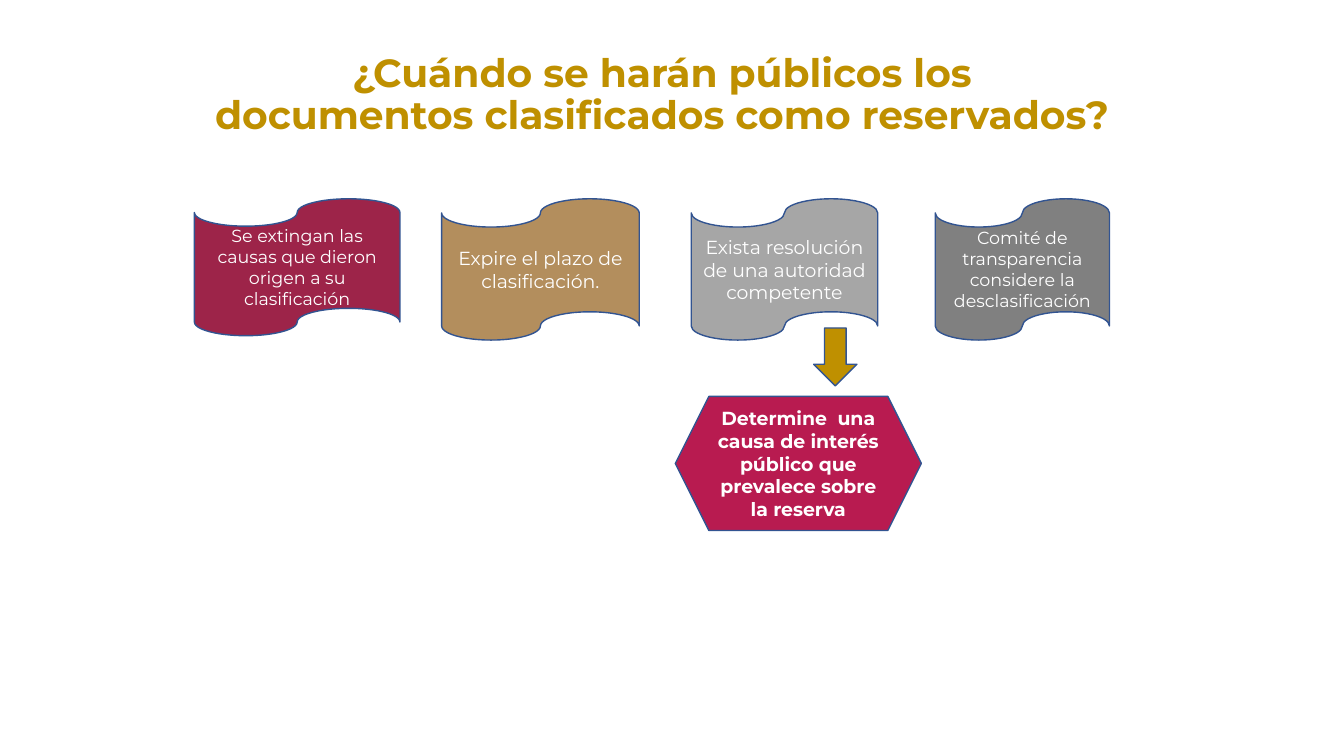
from pptx import Presentation
from pptx import util as u
from pptx.dml import color
from pptx.enum import shapes, text

COLORS = {
    "gold": "BF9000",
    "wine": "9D2449",
    "sand": "B38E5D",
    "silver": "A6A6A6",
    "gray": "808080",
    "crimson": "B81B50",
    "outline": "325491",
    "white": "FFFFFF",
}
FONT = "Montserrat"
TAPE_TOP = 5.01

# Left, width, height (cm), fill, text size, wording
CONDITIONS = [
    (4.9, 5.18, 3.45, "wine", 12.5,
     "Se extingan las causas que dieron origen a su clasificación"),
    (11.13, 4.98, 3.56, "sand", 13.5, "Expire el plazo de clasificación."),
    (17.42, 4.7, 3.56, "silver", 13.5,
     "Exista resolución de una autoridad competente"),
    (23.57, 4.39, 3.56, "gray", 12.5,
     "Comité de transparencia considere la desclasificación"),
]


def rgb(name):
    return color.RGBColor.from_string(COLORS[name])


def write(frame, wording, size, ink="white", bold=False, spacing=1.0):
    frame.word_wrap = True
    frame.vertical_anchor = text.MSO_ANCHOR.MIDDLE
    paragraph = frame.paragraphs[0]
    paragraph.text = wording
    paragraph.alignment = text.PP_ALIGN.CENTER
    paragraph.line_spacing = spacing
    font_format = {"name": FONT, "size": u.Pt(size), "bold": bold}
    for run in paragraph.runs:
        for attribute, value in font_format.items():
            setattr(run.font, attribute, value)
        run.font.color.rgb = rgb(ink)


def add_title(slide, box, wording):
    title = slide.shapes.add_textbox(*map(u.Cm, box))
    write(title.text_frame, wording, 28, "gold", bold=True, spacing=0.9)


def add_figure(slide, preset, box, fill):
    figure = slide.shapes.add_shape(preset, *map(u.Cm, box))
    figure.shadow.inherit = False
    figure.fill.solid()
    figure.fill.fore_color.rgb = rgb(fill)
    figure.line.color.rgb = rgb("outline")
    figure.line.width = u.Pt(1)
    return figure


def main():
    deck = Presentation()
    deck.slide_width, deck.slide_height = u.Cm(33.87), u.Cm(19.05)
    slide = deck.slides.add_slide(deck.slide_layouts[6])
    preset = shapes.MSO_SHAPE

    # Title, with a line break inside its one paragraph
    add_title(slide, (2.08, 0.58, 29.21, 3.68),
              "¿Cuándo se harán públicos los\v"
              "documentos clasificados como reservados?")

    # The four conditions for publication
    for left, width, height, fill, size, wording in CONDITIONS:
        tape = add_figure(slide, preset.FLOWCHART_PUNCHED_TAPE,
                          (left, TAPE_TOP, width, height), fill)
        write(tape.text_frame, wording, size)

    # What the authority's resolution must determine
    cause = add_figure(slide, preset.HEXAGON, (17.02, 9.99, 6.2, 3.38), "crimson")
    write(cause.text_frame,
          "Determine  una causa de interés público que prevalece sobre la reserva",
          13.5, bold=True)

    # Arrow from the resolution down to the cause
    arrow = add_figure(slide, preset.RIGHT_ARROW, (20.32, 8.45, 1.46, 1.09), "gold")
    arrow.rotation = 90

    deck.save("out.pptx")


if __name__ == "__main__":
    main()
